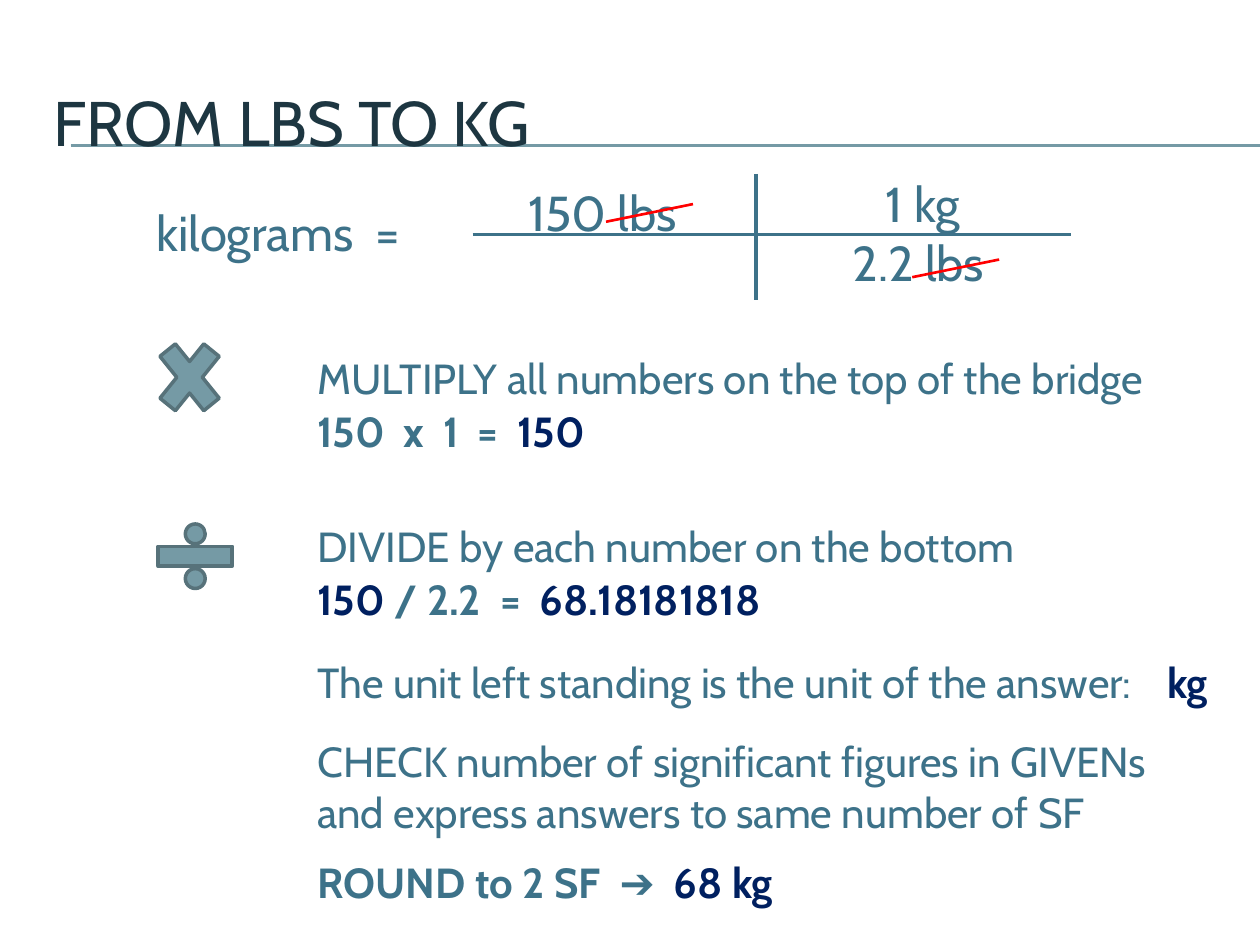
from dataclasses import dataclass

from lxml import etree
from pptx import Presentation
from pptx.dml.color import RGBColor
from pptx.enum.shapes import MSO_CONNECTOR, MSO_SHAPE
from pptx.enum.text import MSO_ANCHOR, PP_ALIGN
from pptx.oxml.ns import qn
from pptx.util import Emu, Pt

STRAIGHT = MSO_CONNECTOR.STRAIGHT
MULTIPLY, DIVIDE = MSO_SHAPE.MATH_MULTIPLY, MSO_SHAPE.MATH_DIVIDE
LEFT, CENTER, RIGHT = PP_ALIGN.LEFT, PP_ALIGN.CENTER, PP_ALIGN.RIGHT
TOP, MIDDLE = MSO_ANCHOR.TOP, MSO_ANCHOR.MIDDLE

EMU_PER_PX = 9144  # 100 px to the inch


@dataclass(frozen=True)
class Theme:
    font: str = "Cabin"
    title: str = "1D3641"
    text: str = "3D7289"
    result: str = "002060"
    rule: str = "759AA5"
    icon_fill: str = "759AA5"
    icon_line: str = "57727A"
    strike: str = "FF0000"
    title_size: int = 36
    bridge_size: int = 28
    step_size: int = 24


THEME = Theme()


def px(value):
    return Emu(value * EMU_PER_PX)


def rgb(value):
    return RGBColor.from_string(value)


def add_line(page, start, end, color, width):
    line = page.shapes.add_connector(STRAIGHT, *map(px, start + end))
    line.line.color.rgb = rgb(color)
    line.line.width = Pt(width)
    etree.SubElement(line._element.spPr, qn("a:effectLst"))


def add_text(page, bounds, spans, size, align=LEFT, anchor=TOP):
    """Add one paragraph made of (wording, colour, bold) spans."""
    box = page.shapes.add_textbox(*map(px, bounds))
    frame = box.text_frame
    frame.word_wrap = True
    frame.vertical_anchor = anchor
    para = frame.paragraphs[0]
    para.alignment = align
    for wording, color, bold in spans:
        span = para.add_run()
        span.text = wording
        span.font.name = THEME.font
        span.font.size = Pt(size)
        span.font.color.rgb = rgb(color)
        span.font.bold = bold


def add_icon(page, kind, bounds):
    icon = page.shapes.add_shape(kind, *map(px, bounds))
    icon.shadow.inherit = False
    icon.fill.solid()
    icon.fill.fore_color.rgb = rgb(THEME.icon_fill)
    icon.line.color.rgb = rgb(THEME.icon_line)
    icon.line.width = Pt(2)


def add_heading(page):
    for y in (115, 116):
        add_line(page, (56, y), (1000, y), THEME.rule, 0.75)
    add_text(page, (33, 50, 950, 92), [("FROM LBS TO KG", THEME.title, False)],
             THEME.title_size, anchor=MIDDLE)


def add_bridge(page):
    """Draw the conversion bridge with its cancelled units."""
    add_line(page, (600, 138), (600, 238), THEME.text, 2)
    add_line(page, (375, 186), (850, 186), THEME.text, 2)
    labels = [
        ("kilograms  = ", 92, 156, 244, RIGHT),
        ("150 lbs ", 400, 140, 165, CENTER),
        ("2.2 lbs", 631, 180, 196, CENTER),
        (" 1 kg", 630, 133, 196, CENTER),
    ]
    for wording, x, y, width, align in labels:
        add_text(page, (x, y, width, 57), [(wording, THEME.text, False)],
                 THEME.bridge_size, align)
    for x, y in ((724, 220), (481, 176)):
        add_line(page, (x, y), (x + 69, y - 14), THEME.strike, 1.5)


def add_steps(page):
    add_icon(page, MULTIPLY, (117, 258, 67, 83))
    add_icon(page, DIVIDE, (115, 408, 80, 67))
    text, result = THEME.text, THEME.result
    steps = [
        (275, 50, [("MULTIPLY all numbers on the top of the bridge", text, False)]),
        (317, 50, [("150  x  1  =  ", text, True), ("150", result, True)]),
        (408, 50, [("DIVIDE by each number on the bottom", text, False)]),
        (450, 50, [("150", result, True), (" / 2.2  =  ", text, True),
                   ("68.18181818", result, True)]),
        (516, 50, [("The unit left standing is the unit of the answer:", text, False)]),
        (579, 91, [("CHECK number of significant figures in GIVENs "
                    "and express answers to same number of SF", text, False)]),
        (675, 50, [("ROUND to 2 SF  ", text, True), ("➔  ", text, False),
                   ("68 kg", result, True)]),
    ]
    for y, height, spans in steps:
        add_text(page, (242, y, 688, height), spans, THEME.step_size)
    add_text(page, (909, 516, 67, 50), [(" kg", result, True)], THEME.step_size)


def main():
    deck = Presentation()
    deck.slide_width, deck.slide_height = px(1000), px(750)
    page = deck.slides.add_slide(deck.slide_layouts[6])
    add_heading(page)
    add_bridge(page)
    add_steps(page)
    deck.save("out.pptx")


if __name__ == "__main__":
    main()
